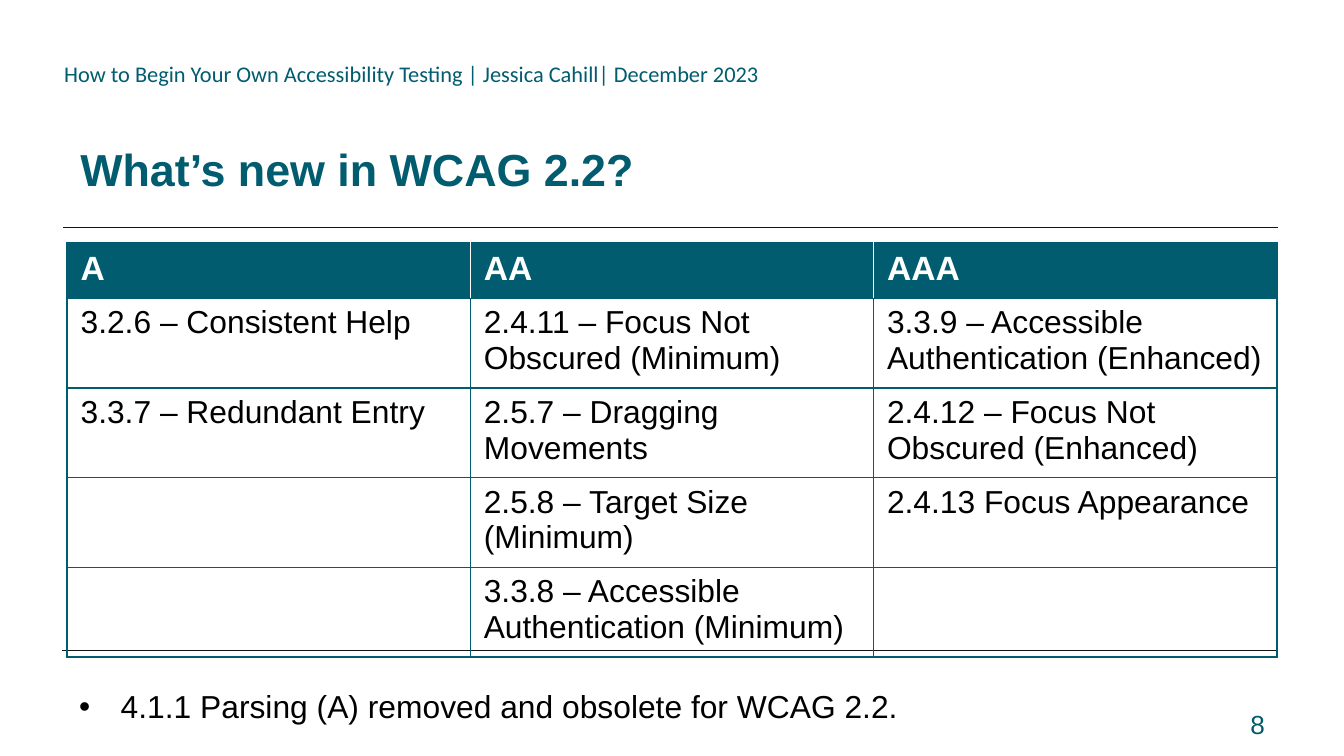
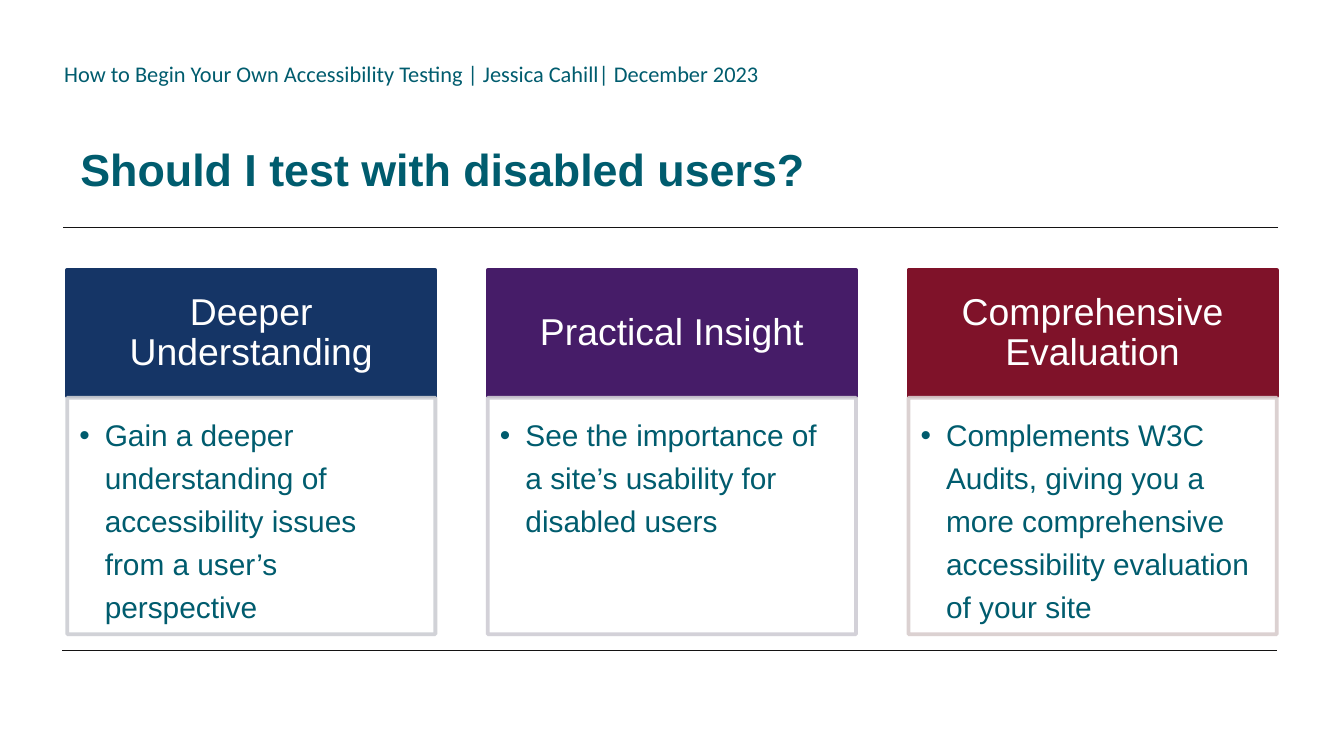
from lxml import etree
from pptx import Presentation
from pptx.dml.color import RGBColor
from pptx.enum.shapes import MSO_CONNECTOR, MSO_SHAPE
from pptx.enum.text import MSO_ANCHOR, PP_ALIGN
from pptx.oxml.ns import qn
from pptx.util import Pt

RECTANGLE = MSO_SHAPE.RECTANGLE
STRAIGHT = MSO_CONNECTOR.STRAIGHT
TOP, MIDDLE, BOTTOM = MSO_ANCHOR.TOP, MSO_ANCHOR.MIDDLE, MSO_ANCHOR.BOTTOM
LEFT, CENTER, RIGHT = PP_ALIGN.LEFT, PP_ALIGN.CENTER, PP_ALIGN.RIGHT

EMU_PER_PX = 9144  # 100 px to the inch
SLIDE_WIDTH = 1000
COLORS = {
    "teal": "005C6E", "white": "FFFFFF", "black": "000000", "rule": "141313",
    "navy": "153566", "navy_edge": "CCCED3",
    "purple": "461C68", "purple_edge": "CFCDD4",
    "crimson": "7F1229", "crimson_edge": "D8CCCD",
}

RUNNING_HEAD = "How to Begin Your Own Accessibility Testing | Jessica Cahill| December 2023"
RULES = [(951, 47, 169), (950, 46, 484)]  # start x, end x, y

CRITERIA_TITLE = "What’s new in WCAG 2.2?"
CRITERIA = [
    ("A", "AA", "AAA"),
    ("3.2.6 – Consistent Help", "2.4.11 – Focus Not Obscured (Minimum)",
     "3.3.9 – Accessible Authentication (Enhanced)"),
    ("3.3.7 – Redundant Entry", "2.5.7 – Dragging Movements",
     "2.4.12 – Focus Not Obscured (Enhanced)"),
    ("", "2.5.8 – Target Size (Minimum)", "2.4.13 Focus Appearance"),
    ("", "3.3.8 – Accessible Authentication (Minimum)", ""),
]
REMOVED_NOTE = "4.1.1 Parsing (A) removed and obsolete for WCAG 2.2."
PAGE_NUMBER = "8"

BENEFITS_TITLE = "Should I test with disabled users?"
BENEFITS = [
    ("Deeper Understanding", "navy",
     "Gain a deeper understanding of accessibility issues from a user’s perspective"),
    ("Practical Insight", "purple",
     "See the importance of a site’s usability for disabled users"),
    ("Comprehensive Evaluation", "crimson",
     "Complements W3C Audits, giving you a more comprehensive accessibility "
     "evaluation of your site"),
]

CONTENT_LEFT, CONTENT_WIDTH = 50, 900
TABLE_TOP, TABLE_HEIGHT = 181, 307
MIN_ROW_HEIGHT = 41  # rows grow to fit their text
CARD_WIDTH = 274
CARD_HEAD = (201, 94)  # top, height
CARD_BODY = (296, 176)


def px(*lengths):
    return [length * EMU_PER_PX for length in lengths]


def rgb(name):
    return RGBColor.from_string(COLORS[name])


def set_bullet(paragraph, indent):
    properties = paragraph._p.get_or_add_pPr()
    properties.set("marL", str(indent * EMU_PER_PX))
    properties.set("indent", str(-indent * EMU_PER_PX))
    etree.SubElement(properties, qn("a:buFont")).set("typeface", "Arial")
    etree.SubElement(properties, qn("a:buChar")).set("char", "•")


def write(frame, text, size, color, bold=False, font="Arial", align=LEFT,
          spacing=None, bullet_indent=None):
    paragraph = frame.paragraphs[0]
    if bullet_indent:
        set_bullet(paragraph, bullet_indent)
    paragraph.alignment = align
    if spacing:
        paragraph.line_spacing = spacing
    run = paragraph.add_run()
    run.text = text
    run.font.size, run.font.bold, run.font.name = Pt(size), bold, font
    run.font.color.rgb = rgb(color)


def set_frame(frame, anchor, insets=(10, 5, 10, 5)):
    frame.word_wrap = True
    frame.vertical_anchor = anchor
    (frame.margin_left, frame.margin_top,
     frame.margin_right, frame.margin_bottom) = px(*insets)


def add_text(slide, box, text, size, color, anchor=TOP, **style):
    frame = slide.shapes.add_textbox(*px(*box)).text_frame
    set_frame(frame, anchor)
    write(frame, text, size, color, **style)


def add_panel(slide, box, fill, edge, anchor, insets, opacity=100):
    """Add an outlined rectangle and return its text frame."""
    panel = slide.shapes.add_shape(RECTANGLE, *px(*box))
    panel.shadow.inherit = False
    panel.fill.solid()
    panel.fill.fore_color.rgb = rgb(fill)
    panel.line.color.rgb = rgb(edge)
    panel.line.width = Pt(2)
    if opacity < 100:
        for tint in panel._element.spPr.iter(qn("a:srgbClr")):
            etree.SubElement(tint, qn("a:alpha")).set("val", str(opacity * 1000))
    set_frame(panel.text_frame, anchor, insets)
    return panel.text_frame


def add_titled_slide(deck, title):
    slide = deck.slides.add_slide(deck.slide_layouts[6])
    add_text(slide, (38, 40, 593, 30), RUNNING_HEAD, 12, "teal", font="Calibri")
    for start, end, y in RULES:
        rule = slide.shapes.add_connector(STRAIGHT, *px(start, y, end, y))
        rule.line.color.rgb = rgb("rule")
        rule.line.width = Pt(0.5)
        etree.SubElement(rule._element.spPr, qn("a:effectLst"))
    add_text(slide, (CONTENT_LEFT, 62, CONTENT_WIDTH, 88), title, 24, "teal",
             anchor=BOTTOM, bold=True)
    return slide


def set_borders(cell, colors):
    properties = cell._tc.get_or_add_tcPr()
    for side, color in colors.items():
        border = etree.SubElement(properties, qn(f"a:ln{side}"), w=str(Pt(1)))
        fill = etree.SubElement(border, qn("a:solidFill"))
        etree.SubElement(fill, qn("a:srgbClr")).set("val", COLORS[color])


def add_criteria_table(slide):
    row_count, column_count = len(CRITERIA), len(CRITERIA[0])
    table = slide.shapes.add_table(
        row_count, column_count,
        *px(CONTENT_LEFT, TABLE_TOP, CONTENT_WIDTH, TABLE_HEIGHT)).table
    table.horz_banding = False
    for r, levels in enumerate(CRITERIA):
        heading = r == 0
        table.rows[r].height = MIN_ROW_HEIGHT * EMU_PER_PX
        for c, text in enumerate(levels):
            cell = table.cell(r, c)
            divider = "white" if heading else "teal"
            set_borders(cell, {
                "L": divider if c > 0 else "teal",
                "R": divider if c < column_count - 1 else "teal",
                "T": "teal", "B": "teal",
            })
            if heading:
                cell.fill.solid()
                cell.fill.fore_color.rgb = rgb("teal")
                write(cell.text_frame, text, 18, "white", bold=True)
            else:
                cell.fill.background()
                if text:
                    write(cell.text_frame, text, 17, "black")


def build_criteria_slide(deck):
    slide = add_titled_slide(deck, CRITERIA_TITLE)
    add_criteria_table(slide)
    add_text(slide, (49, 492, 812, 48), REMOVED_NOTE, 17, "black",
             spacing=1.5, bullet_indent=31)
    add_text(slide, (640, 522, 311, 35), PAGE_NUMBER, 14, "teal", align=RIGHT)


def build_benefits_slide(deck):
    slide = add_titled_slide(deck, BENEFITS_TITLE)
    pitch = (CONTENT_WIDTH - CARD_WIDTH) // (len(BENEFITS) - 1)
    for i, (heading, color, detail) in enumerate(BENEFITS):
        left = CONTENT_LEFT + i * pitch
        top, height = CARD_HEAD
        head = add_panel(slide, (left, top, CARD_WIDTH, height), color, color,
                         MIDDLE, (16, 9, 16, 9))
        write(head, heading, 20, "white", align=CENTER, spacing=0.9)
        top, height = CARD_BODY
        body = add_panel(slide, (left, top, CARD_WIDTH, height), "white",
                         f"{color}_edge", TOP, (9, 9, 12, 14), opacity=90)
        write(body, detail, 16, "teal", spacing=1.2, bullet_indent=19)


def main():
    deck = Presentation()
    deck.slide_width = SLIDE_WIDTH * EMU_PER_PX
    deck.slide_height = deck.slide_width * 9 // 16
    build_criteria_slide(deck)
    build_benefits_slide(deck)
    deck.save("out.pptx")


if __name__ == "__main__":
    main()
